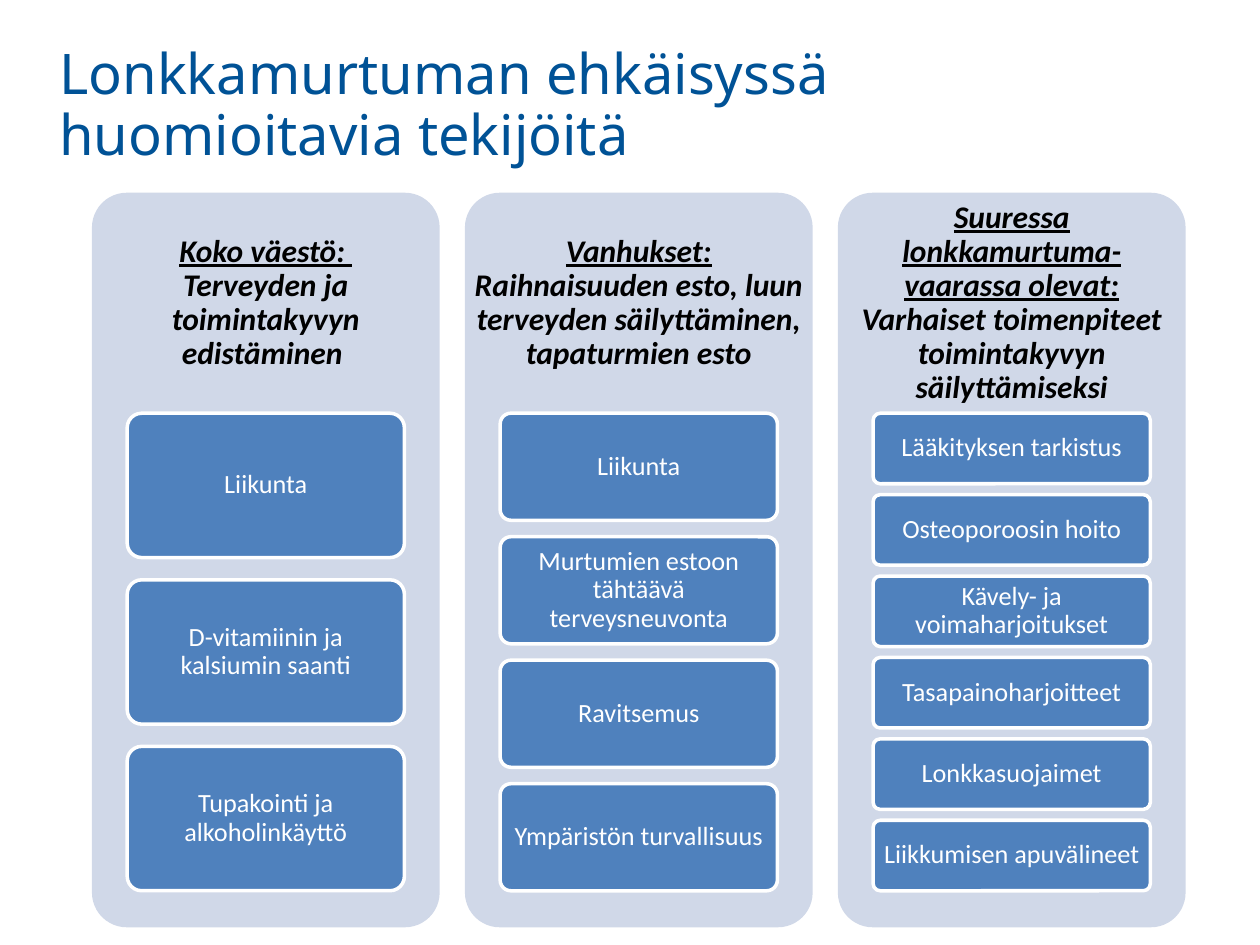
from pptx import Presentation
from pptx.dml.color import RGBColor
from pptx.enum.shapes import MSO_SHAPE
from pptx.enum.text import MSO_ANCHOR, PP_ALIGN
from pptx.util import Inches, Pt

TITLE = "Lonkkamurtuman ehkäisyssä huomioitavia tekijöitä"
COLUMNS = [
    ("Koko väestö: ", "Terveyden ja toimintakyvyn edistäminen ",
     ["Liikunta", "D-vitamiinin ja kalsiumin saanti",
      "Tupakointi ja alkoholinkäyttö"]),
    ("Vanhukset:",
     "Raihnaisuuden esto, luun terveyden säilyttäminen, tapaturmien esto",
     ["Liikunta", "Murtumien estoon tähtäävä terveysneuvonta",
      "Ravitsemus", "Ympäristön turvallisuus"]),
    ("Suuressa lonkkamurtuma-vaarassa olevat:",
     "Varhaiset toimenpiteet toimintakyvyn säilyttämiseksi",
     ["Lääkityksen tarkistus", "Osteoporoosin hoito",
      "Kävely- ja voimaharjoitukset", "Tasapainoharjoitteet",
      "Lonkkasuojaimet", "Liikkumisen apuvälineet"]),
]
COLORS = {"title": "005296", "panel": "D0D8E8", "card": "4F81BD",
          "white": "FFFFFF", "black": "000000"}

LEFT, TOP, PITCH = 0.73, 1.53, 2.96
PANEL_W, PANEL_H, HEAD_H = 2.76, 5.83, 1.75
CARD_W, CARDS_H, GAP_RATIO = 2.2, 3.79, 2 / 13


def rgb(name):
    return RGBColor.from_string(COLORS[name])


def add_box(s, x, y, w, h, fill, line=None):
    sp = s.shapes.add_shape(MSO_SHAPE.ROUNDED_RECTANGLE,
                            Inches(x), Inches(y), Inches(w), Inches(h))
    sp.adjustments[0] = 0.1
    sp.shadow.inherit = False
    sp.fill.solid()
    sp.fill.fore_color.rgb = rgb(fill)
    if line:
        sp.line.color.rgb = rgb(line)
        sp.line.width = Pt(2)
    else:
        sp.line.fill.background()
    return sp


def write(sp, text, font, size, color, anchor=MSO_ANCHOR.MIDDLE,
          align=PP_ALIGN.CENTER, spacing=0.9, inset=(0.07, 0.07)):
    tf = sp.text_frame
    tf.word_wrap = True
    tf.vertical_anchor = anchor
    tf.margin_left = tf.margin_right = Inches(inset[0])
    tf.margin_top = tf.margin_bottom = Inches(inset[1])
    p = tf.paragraphs[0]
    p.text = text
    p.alignment = align
    p.line_spacing = spacing
    for r in p.runs:
        r.font.name = font
        r.font.size = Pt(size)
        r.font.color.rgb = rgb(color)
    return p


def add_column(s, x, group, goal, items):
    add_box(s, x, TOP, PANEL_W, PANEL_H, "panel")
    head = s.shapes.add_textbox(Inches(x), Inches(TOP),
                                Inches(PANEL_W), Inches(HEAD_H))
    p = write(head, f"{group}\v{goal}", "Calibri", 18, "black")
    for r in p.runs:
        r.font.bold = r.font.italic = True
    p.runs[0].font.underline = True

    n = len(items)
    h = CARDS_H / (n + (n - 1) * GAP_RATIO)
    for i, item in enumerate(items):
        y = TOP + HEAD_H + i * h * (1 + GAP_RATIO)
        card = add_box(s, x + (PANEL_W - CARD_W) / 2, y, CARD_W, h,
                       "card", "white")
        write(card, item, "Calibri", 15, "white", inset=(0.04, 0.03))


def main():
    prs = Presentation()
    prs.slide_width, prs.slide_height = Inches(10), Inches(7.5)
    s = prs.slides.add_slide(prs.slide_layouts[5])
    title = s.shapes.title
    title.left, title.top = Inches(0.37), Inches(0.22)
    title.width, title.height = Inches(9.02), Inches(1.26)
    write(title, TITLE, "Noto Sans", 32, "title", align=PP_ALIGN.LEFT,
          spacing=0.9, inset=(0.1, 0.05))
    for i, column in enumerate(COLUMNS):
        add_column(s, LEFT + i * PITCH, *column)
    prs.save("out.pptx")


if __name__ == "__main__":
    main()
